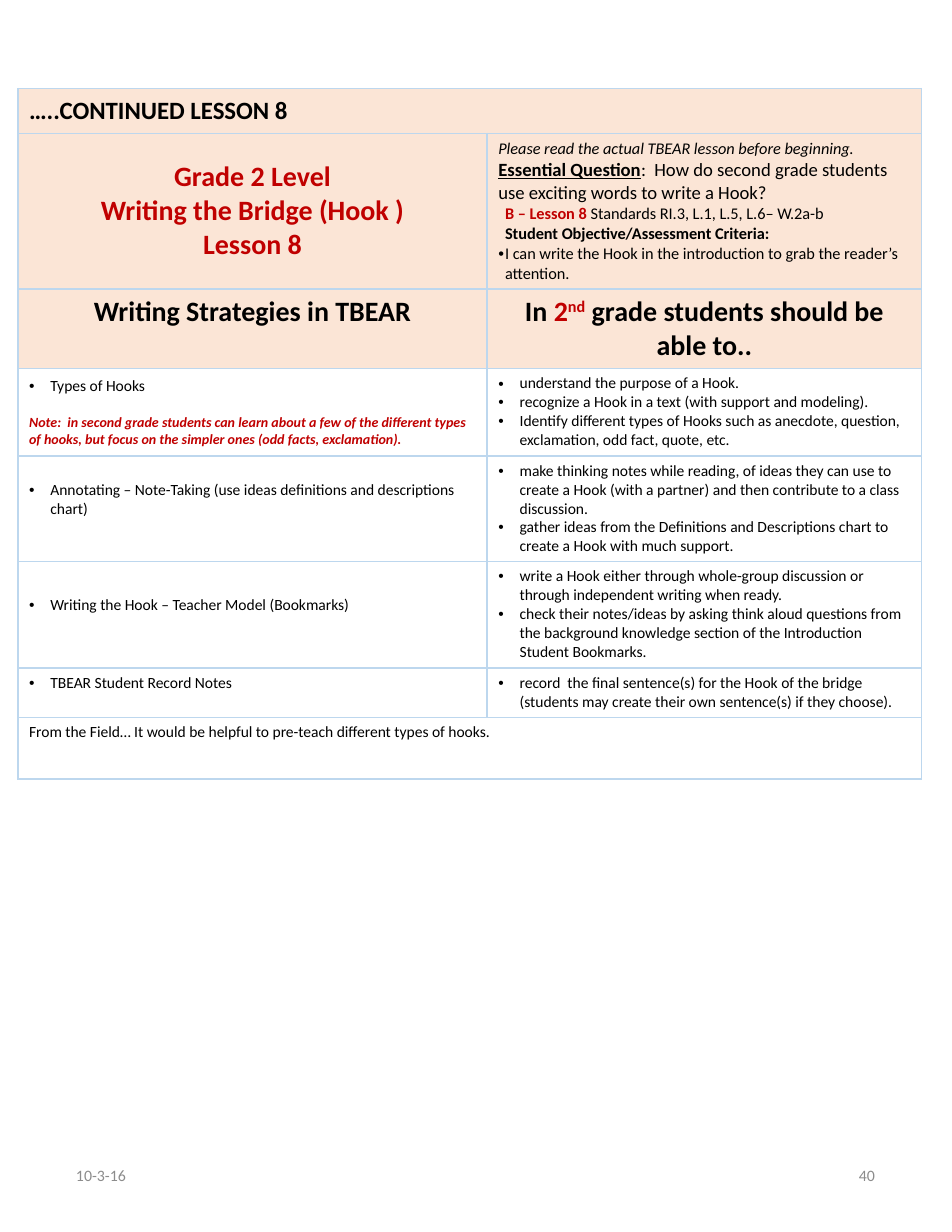
from dataclasses import dataclass

from lxml import etree
from pptx import Presentation
from pptx.dml.color import RGBColor
from pptx.enum.text import MSO_ANCHOR, PP_ALIGN
from pptx.oxml.ns import qn
from pptx.util import Inches, Pt

TOP, MID = MSO_ANCHOR.TOP, MSO_ANCHOR.MIDDLE
LEFT, CENTER, RIGHT = PP_ALIGN.LEFT, PP_ALIGN.CENTER, PP_ALIGN.RIGHT


@dataclass(frozen=True)
class Theme:
    font: str = "Calibri"
    ink: str = "000000"
    red: str = "C00000"
    gray: str = "8C8C8C"
    peach: str = "FBE5D6"
    white: str = "FFFFFF"
    line: str = "BDD7EE"
    head: float = 18
    title: float = 16
    lead: float = 12
    goal: float = 10.5
    foot: float = 10.2
    body: float = 10
    note: float = 9


@dataclass
class Run:
    text: str
    size: float
    color: str = Theme.ink
    style: str = ""


@dataclass
class Para:
    runs: list
    align: PP_ALIGN = LEFT
    indent: float = 0
    bullet: bool = False
    after: float = 0


@dataclass
class Cell:
    paras: list
    fill: str = Theme.white
    anchor: MSO_ANCHOR = TOP
    lift: float = 0


class Page:
    """Draws styled elements on the current slide."""

    def __init__(self, slide, theme):
        self.slide = slide
        self.theme = theme

    def add_paras(self, frame, paras):
        for i, para in enumerate(paras):
            p = frame.add_paragraph() if i else frame.paragraphs[0]
            p.alignment = para.align
            p.space_after = Pt(para.after)
            props = p._p.get_or_add_pPr()
            props.set("marL", str(Inches(para.indent)))
            props.set("indent", str(-Inches(para.indent) if para.bullet else 0))
            if para.bullet:
                tint = etree.SubElement(props, qn("a:buClr"))
                etree.SubElement(tint, qn("a:srgbClr"), val=self.theme.ink)
                etree.SubElement(props, qn("a:buFont"), typeface="Arial")
                etree.SubElement(props, qn("a:buChar"), char="•")
            for run in para.runs:
                self.add_run(p, run)

    def add_run(self, p, run):
        r = p.add_run()
        r.text = run.text
        font = r.font
        font.name, font.size = self.theme.font, Pt(run.size)
        font.color.rgb = RGBColor.from_string(run.color)
        font.bold = "b" in run.style
        font.italic = "i" in run.style
        font.underline = "u" in run.style
        if "^" in run.style:
            r._r.get_or_add_rPr().set("baseline", "30000")

    def text(self, x, y, w, h, para):
        frame = self.slide.shapes.add_textbox(*map(Inches, (x, y, w, h))).text_frame
        frame.word_wrap = True
        frame.vertical_anchor = MID
        self.add_paras(frame, [para])

    def paint(self, cell, fill):
        props = cell._tc.get_or_add_tcPr()
        for side in ("lnL", "lnR", "lnT", "lnB"):
            line = etree.SubElement(props, qn(f"a:{side}"), w=str(Pt(1)))
            solid = etree.SubElement(line, qn("a:solidFill"))
            etree.SubElement(solid, qn("a:srgbClr"), val=self.theme.line)
        cell.fill.solid()
        cell.fill.fore_color.rgb = RGBColor.from_string(fill)

    def table(self, x, y, cols, heights, rows):
        shape = self.slide.shapes.add_table(
            len(rows), len(cols), Inches(x), Inches(y),
            Inches(sum(cols)), Inches(sum(heights)))
        grid = shape.table
        grid.first_row = grid.horz_banding = False
        for col, width in zip(grid.columns, cols):
            col.width = Inches(width)
        for i, (row, height) in enumerate(zip(rows, heights)):
            grid.rows[i].height = Inches(height)
            for j in range(len(cols)):
                self.paint(grid.cell(i, j), row[0].fill)
            if len(row) == 1:
                grid.cell(i, 0).merge(grid.cell(i, len(cols) - 1))
            for j, item in enumerate(row):
                cell = grid.cell(i, j)
                cell.vertical_anchor = item.anchor
                cell.margin_bottom = Inches(0.05 + item.lift)
                self.add_paras(cell.text_frame, item.paras)


def main():
    t = Theme()

    def head(text):
        return Para([Run(text, t.head, t.red, "b")], CENTER)

    def point(text, after=0):
        return Para([Run(text, t.body)], indent=0.19, bullet=True, after=after)

    def skill(text):
        return Cell([point(text)], anchor=MID, lift=0.17)

    def goals(*texts):
        return Cell([point(text) for text in texts])

    brief = [
        Para([Run("Please read the actual TBEAR lesson before beginning.", t.goal, style="i")]),
        Para([Run("Essential Question", t.lead, style="bu"),
              Run(":  How do second grade students use exciting words to write a Hook?", t.lead)]),
        Para([Run("B – Lesson 8 ", t.goal, t.red, "b"),
              Run("Standards RI.3, L.1, L.5, L.6– W.2a-b", t.goal)], indent=0.06),
        Para([Run("Student Objective/Assessment Criteria:", t.goal, style="b")], indent=0.06),
        Para([Run("I can write the Hook in the introduction to grab the reader’s attention.",
                  t.goal)], indent=0.06, bullet=True),
    ]
    able = Para([Run("In ", t.head, style="b"), Run("2", t.head, t.red, "b"),
                 Run("nd", t.head, t.red, "b^"),
                 Run(" grade students should be able to..", t.head, style="b")], CENTER)
    note = Para([Run("Note:  in second grade students can learn about a few of the different "
                     "types of hooks, but focus on the simpler ones (odd facts, exclamation).",
                     t.note, t.red, "bi")])
    rows = [
        [Cell([Para([Run("…..CONTINUED LESSON 8", t.title, style="b")])], t.peach, MID)],
        [Cell([head("Grade 2 Level"), head("Writing the Bridge (Hook )"), head("Lesson 8")],
              t.peach, MID),
         Cell(brief, t.peach, MID)],
        [Cell([Para([Run("Writing Strategies in TBEAR", t.head, style="b")], CENTER)], t.peach),
         Cell([able], t.peach)],
        [Cell([point("Types of Hooks", 12), note], anchor=MID),
         goals("understand the purpose of a Hook.",
               "recognize a Hook in a text (with support and modeling).",
               "Identify different types of Hooks such as anecdote, question, exclamation, "
               "odd fact, quote, etc.")],
        [skill("Annotating – Note-Taking (use ideas definitions and descriptions chart)"),
         goals("make thinking notes while reading, of ideas they can use to create a Hook "
               "(with a partner) and then contribute to a class discussion.",
               "gather ideas from the Definitions and Descriptions chart to create a Hook "
               "with much support.")],
        [skill("Writing the Hook – Teacher Model (Bookmarks)"),
         goals("write a Hook either through whole-group discussion or through independent "
               "writing when ready.",
               "check their notes/ideas by asking think aloud questions from the background "
               "knowledge section of the Introduction Student Bookmarks.")],
        [skill("TBEAR Student Record Notes"),
         goals("record  the final sentence(s) for the Hook of the bridge (students may create "
               "their own sentence(s) if they choose).")],
        [Cell([Para([Run("From the Field… It would be helpful to pre-teach different types "
                         "of hooks.", t.body)])])],
    ]

    deck = Presentation()
    deck.slide_width, deck.slide_height = Inches(8.5), Inches(11)
    page = Page(deck.slides.add_slide(deck.slide_layouts[6]), t)
    page.table(0.16, 0.79, [4.19, 3.88],
               [0.4, 1.39, 0.71, 0.78, 0.93, 0.95, 0.44, 0.55], rows)
    for x, text, align in ((0.58, "10-3-16", LEFT), (6, "40", RIGHT)):
        page.text(x, 10.2, 1.91, 0.59, Para([Run(text, t.foot, t.gray)], align))
    deck.save("out.pptx")


if __name__ == "__main__":
    main()
